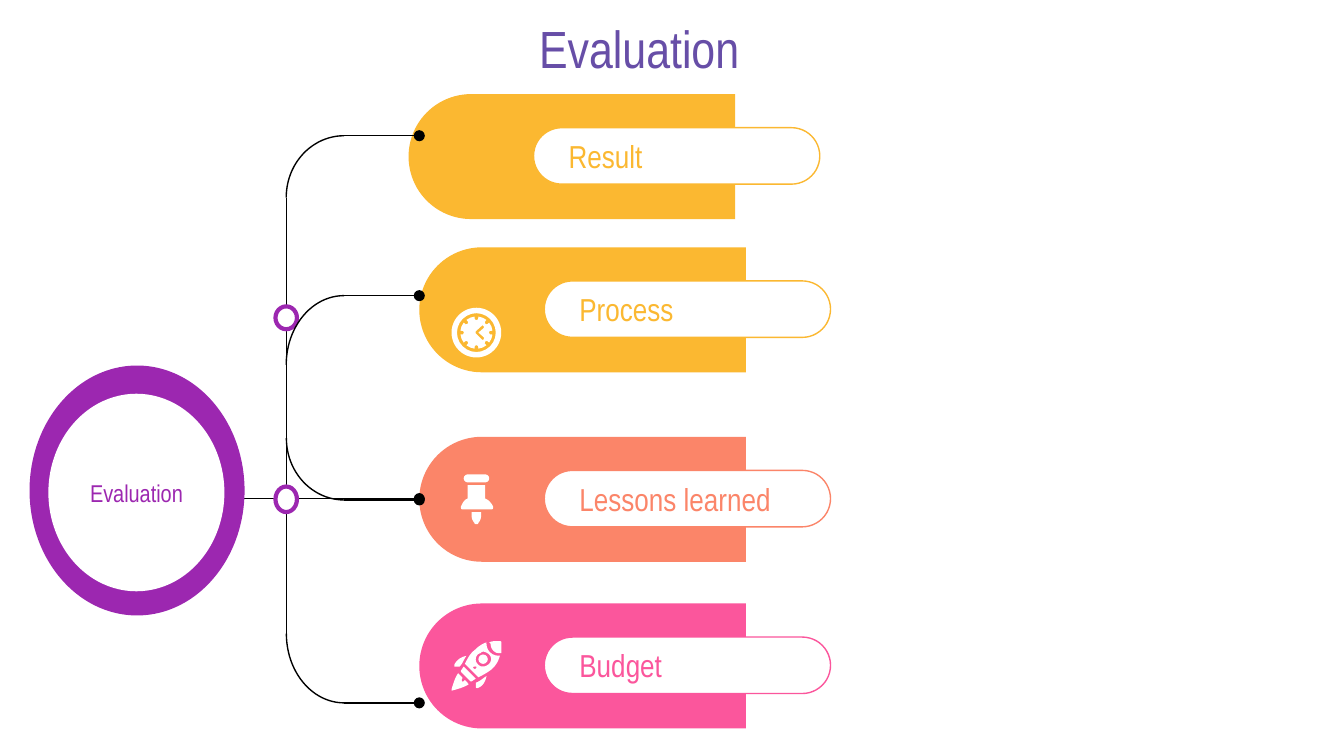
import math

from lxml import etree
from pptx import Presentation
from pptx import util as u
from pptx.dml.color import RGBColor
from pptx.enum import shapes, text
from pptx.oxml.ns import qn

FONT = "Arial Narrow"
WHITE, BLACK, PURPLE = "FFFFFF", "000000", "9C27B0"
AMBER, CORAL, PINK = "FBB831", "FB8569", "FB569C"
SHAPE = shapes.MSO_SHAPE

PIN_PATHS = [
    "M 5 8 L 5 18 C 2 19 1 22 0 24 C 0 25 0 26 1 26 L 23 26 "
    "C 24 26 24 25 24 24 C 23 22 21 19 18 18 L 18 8",
    "M 8 28 L 8 31 C 8 33 9 35 10 36 C 10 37 11 37 12 37 "
    "C 13 37 13 36 13 36 C 14 35 15 33 15 31 L 15 28",
]
ROCKET_PATHS = [
    "M 9 19 L 7 22 C 7 23 7 23 8 24 L 14 30 L 15 30 L 18 28",
    "M 28 1 L 29 2 C 29 6 32 9 35 9 L 37 9 C 37 7 37 4 37 1 "
    "C 37 1 37 0 36 0 L 34 0 C 32 0 30 0 28 1",
    "M 26 1 C 23 2 20 4 17 7 C 14 9 12 13 10 17 L 20 27 C 24 25 28 23 31 20 "
    "C 33 18 35 15 36 11 L 35 11 C 30 11 26 7 26 2 "
    "M 24 8 C 25 8 27 9 28 10 C 30 12 30 15 28 17 C 27 18 25 19 24 19 "
    "L 22 19 C 20 18 18 16 18 14 C 18 11 20 9 22 9 C 22 8 23 8 24 8 "
    "M 18 19 C 19 19 19 20 18 20 L 18 21 C 17 21 16 20 16 20 C 16 19 17 19 18 19",
    "M 26 26 C 23 28 21 30 18 31 C 18 32 18 34 18 34 C 18 35 19 35 19 35 "
    "C 20 35 25 33 26 26",
    "M 11 11 C 5 12 2 17 2 18 L 2 19 L 6 19 C 8 17 9 14 11 11",
    "M 5 24 C 3 26 1 33 0 36 L 0 37 C 4 36 11 34 13 32 C 13 32 12 32 12 31 "
    "L 10 29 L 9 30 C 8 31 7 29 8 28 L 8 27 L 6 25",
]


def rgb(value):
    """Return the colour for a hex string."""
    return RGBColor.from_string(value)


def paint(shape, fill=None, line=None, weight=0.75):
    """Set fill and outline of a shape and remove its shadow."""
    shape.shadow.inherit = False
    if fill:
        shape.fill.solid()
        shape.fill.fore_color.rgb = rgb(fill)
    else:
        shape.fill.background()
    if line:
        shape.line.color.rgb = rgb(line)
        shape.line.width = u.Pt(weight)
    else:
        shape.line.fill.background()
    return shape


def add_part(slide, kind, box, fill=None, line=None, weight=0.75):
    """Add a painted preset shape in a box given in inches."""
    part = slide.shapes.add_shape(kind, *map(u.Inches, box))
    return paint(part, fill, line, weight)


def write(shape, wording, size, colour, align, left_inset=0.1):
    """Put one line of middle-anchored text into a shape."""
    frame = shape.text_frame
    frame.word_wrap = True
    frame.vertical_anchor = text.MSO_ANCHOR.MIDDLE
    frame.margin_top = frame.margin_bottom = frame.margin_right = u.Inches(0.1)
    frame.margin_left = u.Inches(left_inset)
    paragraph = frame.paragraphs[0]
    paragraph.text = wording
    paragraph.alignment = align
    paragraph.font.name = FONT
    paragraph.font.size = u.Pt(size)
    paragraph.font.color.rgb = rgb(colour)


def add_line(slide, start, end, dot=False):
    """Draw a thin black line, with a round end if wanted."""
    line = slide.shapes.add_connector(
        shapes.MSO_CONNECTOR.STRAIGHT, *map(u.Inches, (*start, *end)))
    line.line.color.rgb = rgb(BLACK)
    line.line.width = u.Pt(0.75)
    if dot:
        etree.SubElement(line.line._get_or_add_ln(), qn("a:tailEnd"), type="oval")
    etree.SubElement(line._element.spPr, qn("a:effectLst"))


def contours(path, steps=6):
    """Turn path commands into closed contours, sampling the curves."""
    tokens, found = iter(path.split()), []
    for command in tokens:
        count = 3 if command == "C" else 1
        points = [(float(next(tokens)), float(next(tokens))) for _ in range(count)]
        if command == "M":
            found.append(points)
        elif command == "L":
            found[-1] += points
        else:
            curve = [found[-1][-1], *points]
            for step in range(1, steps + 1):
                t = step / steps
                weights = [math.comb(3, i) * t**i * (1 - t)**(3 - i) for i in range(4)]
                found[-1].append(tuple(
                    sum(w * p[axis] for w, p in zip(weights, curve)) for axis in (0, 1)))
    return found


def add_outline(slide, left, top, outlines):
    """Build one white freeform from contours in hundredths of an inch."""
    builder = None
    for outline in outlines:
        points = [(u.Inches(left + x / 100), u.Inches(top + y / 100)) for x, y in outline]
        if builder is None:
            builder = slide.shapes.build_freeform(*points[0], scale=1.0)
        else:
            builder.move_to(*points[0])
        builder.add_line_segments(points[1:], close=True)
    paint(builder.convert_to_shape(), WHITE)


def clock_icon(slide, left, top):
    """Draw a clock with eight notches and cut-out hands."""
    rim = add_part(slide, SHAPE.DONUT, (left, top, 0.37, 0.37), WHITE)
    rim.adjustments[0] = 0.11
    face = []
    for tick in range(8):
        for offset, radius in ((-7, 12), (-7, 10), (0, 9.3), (7, 10), (7, 12), (22.5, 12)):
            angle = math.radians(tick * 45 + offset)
            face.append((18.5 + radius * math.cos(angle), 18.5 + radius * math.sin(angle)))
    hands = [(23, 13), (24, 14), (24, 15), (20, 18.5), (24, 22), (24, 23.5),
             (23, 24), (18, 19), (18, 17.5)]
    add_outline(slide, left, top, [face, hands])


def pin_icon(slide, left, top):
    """Draw a push pin."""
    head = add_part(slide, SHAPE.ROUNDED_RECTANGLE, (left + 0.02, top, 0.19, 0.06), WHITE)
    head.adjustments[0] = 0.5
    for path in PIN_PATHS:
        add_outline(slide, left, top, contours(path))


def rocket_icon(slide, left, top):
    """Draw a rocket with a round window."""
    for path in ROCKET_PATHS:
        add_outline(slide, left, top, contours(path))
    add_part(slide, SHAPE.OVAL, (left + 0.2, top + 0.1, 0.07, 0.07), WHITE)


def topic_card(slide, box, wording, colour):
    """Draw a card rounded on the left with a labelled pill across it."""
    left, top, width, height = box
    shift = (width - height) / 2
    card = add_part(slide, SHAPE.ROUND_2_SAME_RECTANGLE,
                    (left + shift, top - shift, height, width), colour)
    card.rotation = 270
    card.adjustments[0] = 0.5
    pill = add_part(slide, SHAPE.ROUNDED_RECTANGLE,
                    (left + 0.93, top + 0.25, 2.13, 0.42), WHITE, colour)
    pill.adjustments[0] = 0.5
    write(pill, wording, 17, colour, text.PP_ALIGN.LEFT, 0.2)


def branch(slide, box, bend, node_height):
    """Draw a bracket with curved corners and a ring at its middle."""
    left, top, width, height = box
    bend_width, middle = 0.86, top + height / 2
    for end, inward in ((top, 1), (top + height, -1)):
        corner = add_part(slide, SHAPE.ARC,
                          (left, min(end, end + inward * bend), bend_width, bend), line=BLACK)
        if inward == 1:
            corner._element.spPr.xfrm.set("flipH", "1")
        else:
            corner.rotation = 180
        add_line(slide, (left + bend_width / 2, end), (left + width, end), dot=True)
        add_line(slide, (left, end + inward * bend / 2), (left, middle))
    add_part(slide, SHAPE.OVAL, (left - 0.08, middle - node_height / 2, 0.16, node_height),
             WHITE, PURPLE, 2.25)


def hub(slide, box):
    """Draw the ringed oval that names the whole diagram."""
    left, top, width, height = box
    add_part(slide, SHAPE.OVAL, box, PURPLE)
    centre = add_part(slide, SHAPE.OVAL,
                      (left + 0.14, top + 0.21, width - 0.29, height - 0.39), WHITE)
    write(centre, "Evaluation", 13, PURPLE, text.PP_ALIGN.CENTER)


def evaluation_slide(deck):
    """Compose the title, topic cards, branches and hub."""
    slide = deck.slides.add_slide(deck.slide_layouts[5])
    title = slide.shapes.title
    title.left, title.top, title.width, title.height = map(u.Inches, (0.53, 0.09, 8.45, 0.53))
    write(title, "Evaluation", 28, "674EA7", text.PP_ALIGN.CENTER)
    topics = [
        ("Lessons learned", CORAL, 3.12, 3.25, pin_icon, 0.31, 0.28),
        ("Budget", PINK, 3.12, 4.49, rocket_icon, 0.24, 0.28),
        ("Process", AMBER, 3.12, 1.84, clock_icon, 0.24, 0.45),
        ("Result", AMBER, 3.04, 0.7, None, 0, 0),
    ]
    for wording, colour, left, top, icon, icon_x, icon_y in topics:
        topic_card(slide, (left, top, 2.43, 0.93), wording, colour)
        if icon:
            icon(slide, left + icon_x, top + icon_y)
    branch(slide, (2.13, 1.01, 0.99, 2.71), 0.92, 0.17)
    add_line(slide, (1.37, 3.71), (3.12, 3.71), dot=True)
    branch(slide, (2.13, 2.2, 0.99, 3.03), 1.03, 0.19)
    hub(slide, (0.22, 2.72, 1.6, 1.86))


def main():
    """Build and save a widescreen deck."""
    deck = Presentation()
    deck.slide_width = u.Inches(10)
    deck.slide_height = deck.slide_width * 9 // 16
    evaluation_slide(deck)
    deck.save("out.pptx")


if __name__ == "__main__":
    main()
